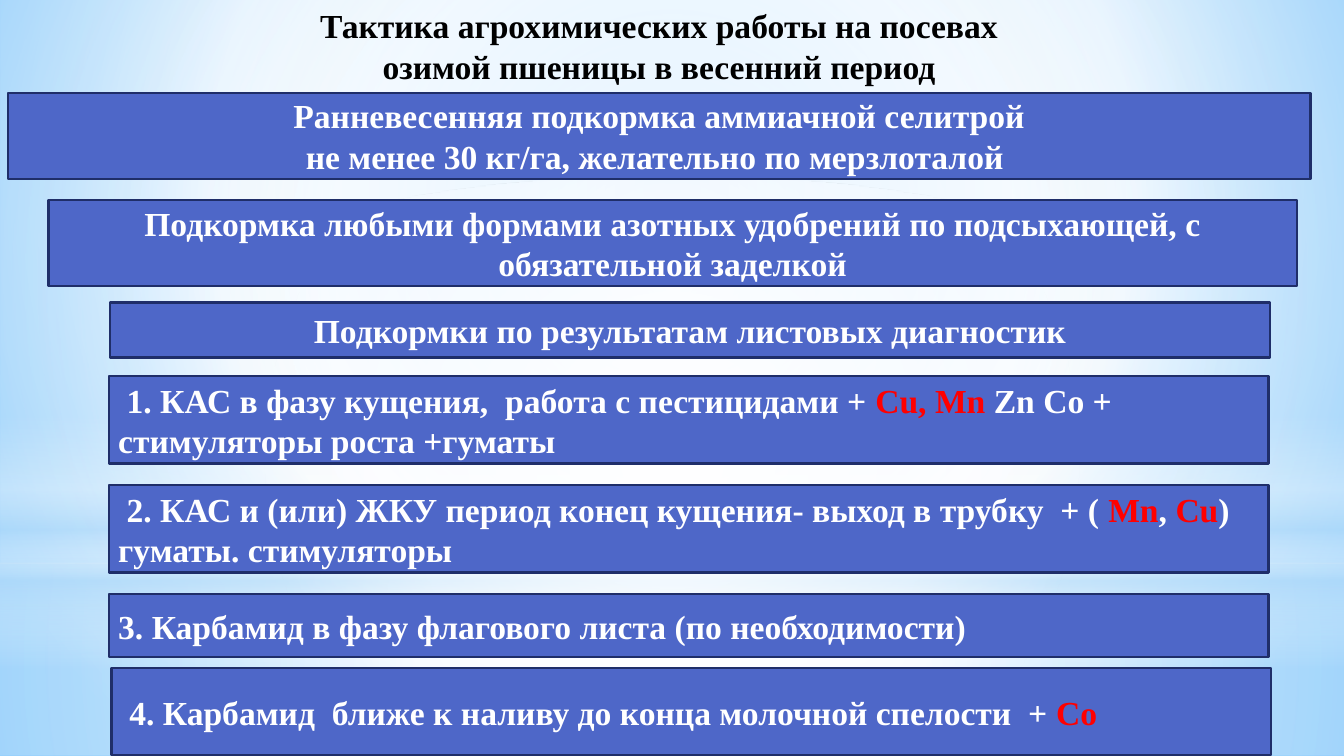
from lxml import etree
from pptx import Presentation
from pptx.dml.color import RGBColor
from pptx.enum.shapes import MSO_SHAPE as Shape
from pptx.enum.text import MSO_ANCHOR as Anchor, MSO_AUTO_SIZE as AutoSize, PP_ALIGN as Align
from pptx.oxml.ns import qn
from pptx.util import Inches, Pt

FONT = "Times New Roman"
BLACK = RGBColor(0x00, 0x00, 0x00)
WHITE = RGBColor(0xFF, 0xFF, 0xFF)
RED = RGBColor(0xFF, 0x00, 0x00)
BAR_FILL = RGBColor(0x4E, 0x67, 0xC8)
BAR_EDGE = RGBColor(0x1F, 0x2E, 0x69)
PALE = RGBColor(0xB4, 0xDC, 0xFA)
SKY_INNER = RGBColor(0x9E, 0xD5, 0xFF)
SKY_OUTER = RGBColor(0x5B, 0xB9, 0xFF)

WIDTH = 10
HEIGHT = WIDTH * 9 / 16
HORIZON = 4.19
CENTRE = (50, 50, 50, 50)

SKY = [(0, SKY_INNER, 100), (60, WHITE, 100), (100, SKY_OUTER, 100)]
GLOWS = [
    (Shape.RECTANGLE, (0, HORIZON, WIDTH, HEIGHT - HORIZON),
     [(0, WHITE, 91), (37, WHITE, 76), (100, PALE, 79)], CENTRE),
    (Shape.RECTANGLE, (0, 0, WIDTH, HORIZON),
     [(0, WHITE, 89), (48, WHITE, 62), (100, PALE, 79)], CENTRE),
    (Shape.RECTANGLE, (0, 3.09, WIDTH, 1.88),
     [(0, WHITE, 0), (29, WHITE, 30), (45, PALE, 40),
      (55, WHITE, 26), (65, PALE, 60), (100, WHITE, 0)], None),
    (Shape.OVAL, (0, 1.31, WIDTH, HORIZON),
     [(0, WHITE, 100), (56, WHITE, 0)], CENTRE),
]

TITLE = "Тактика агрохимических работы на посевах\nозимой пшеницы в весенний период"
STAGES = [
    ((0.06, 0.69, 9.69, 0.64),
     "Ранневесенняя подкормка аммиачной селитрой\n"
     "не менее 30 кг/га, желательно по мерзлоталой "),
    ((0.36, 1.49, 9.29, 0.64),
     "Подкормка любыми формами азотных удобрений по подсыхающей, с обязательной заделкой"),
    ((0.82, 2.25, 8.63, 0.41), "Подкормки по результатам листовых диагностик"),
]
STEPS = [
    ((0.81, 2.8, 8.63, 0.65),
     " 1. КАС в фазу кущения,  работа с пестицидами + *Cu, Mn* Zn Со + стимуляторы роста +гуматы"),
    ((0.81, 3.61, 8.63, 0.65),
     " 2. КАС и (или) ЖКУ период конец кущения- выход в трубку  + ( *Mn*, *Cu*) гуматы. стимуляторы"),
    ((0.81, 4.42, 8.63, 0.47), "3. Карбамид в фазу флагового листа (по необходимости)"),
    ((0.83, 4.97, 8.63, 0.65),
     " 4. Карбамид  ближе к наливу до конца молочной спелости  + *Со*"),
]


def write_text(frame, text, color=WHITE, accent=RED, align=Align.CENTER,
               anchor=Anchor.MIDDLE, wrap=True, size=18):
    frame.word_wrap = wrap
    frame.auto_size = AutoSize.NONE
    frame.vertical_anchor = anchor
    frame.margin_left = frame.margin_right = Inches(0.07)
    frame.margin_top = frame.margin_bottom = Inches(0.04)
    for index, line in enumerate(text.split("\n")):
        paragraph = frame.add_paragraph() if index else frame.paragraphs[0]
        paragraph.alignment = align
        paragraph.space_before = Pt(0)
        for part, words in enumerate(line.split("*")):
            if words:
                run = paragraph.add_run()
                run.text = words
                run.font.name = FONT
                run.font.size = Pt(size)
                run.font.bold = True
                run.font.color.rgb = accent if part % 2 else color


def apply_gradient(fill, properties, stops, focus=None):
    fill.solid()
    gradient = etree.Element(qn("a:gradFill"), rotWithShape="1")
    stop_list = etree.SubElement(gradient, qn("a:gsLst"))
    for position, color, opacity in stops:
        stop = etree.SubElement(stop_list, qn("a:gs"), pos=str(position * 1000))
        tint = etree.SubElement(stop, qn("a:srgbClr"), val=str(color))
        if opacity < 100:
            etree.SubElement(tint, qn("a:alpha"), val=str(opacity * 1000))
    if focus:
        circle = etree.SubElement(gradient, qn("a:path"), path="circle")
        edges = {side: str(share * 1000) for side, share in zip("ltrb", focus)}
        etree.SubElement(circle, qn("a:fillToRect"), **edges)
    else:
        etree.SubElement(gradient, qn("a:lin"), ang="5400000", scaled="0")
    properties.replace(properties.find(qn("a:solidFill")), gradient)


def add_flat_shape(slide, kind, box):
    shape = slide.shapes.add_shape(kind, *map(Inches, box))
    shape.shadow.inherit = False
    return shape


def add_backdrop(slide):
    sky = slide.background.fill
    sky.solid()
    apply_gradient(sky, slide._element.find(".//" + qn("p:bgPr")), SKY, (20, 10, 20, 60))
    for kind, box, stops, focus in GLOWS:
        glow = add_flat_shape(slide, kind, box)
        glow.line.fill.background()
        apply_gradient(glow.fill, glow._element.spPr, stops, focus)


def add_title(slide, box):
    title = slide.shapes.title
    title.left, title.top, title.width, title.height = map(Inches, box)
    write_text(title.text_frame, TITLE, color=BLACK, anchor=Anchor.TOP, wrap=False)
    slide.shapes._spTree.append(title._element)


def add_bar(slide, box, text, align):
    bar = add_flat_shape(slide, Shape.RECTANGLE, box)
    bar.fill.solid()
    bar.fill.fore_color.rgb = BAR_FILL
    bar.line.color.rgb = BAR_EDGE
    bar.line.width = Pt(1.25)
    write_text(bar.text_frame, text, align=align)


def main():
    deck = Presentation()
    deck.slide_width, deck.slide_height = Inches(WIDTH), Inches(HEIGHT)
    slide = deck.slides.add_slide(deck.slide_layouts.get_by_name("Title Only"))
    add_backdrop(slide)
    add_title(slide, (2.28, 0, 5.25, 0.68))
    for bars, align in ((STAGES, Align.CENTER), (STEPS, Align.LEFT)):
        for box, text in bars:
            add_bar(slide, box, text, align)
    deck.save("out.pptx")


if __name__ == "__main__":
    main()
